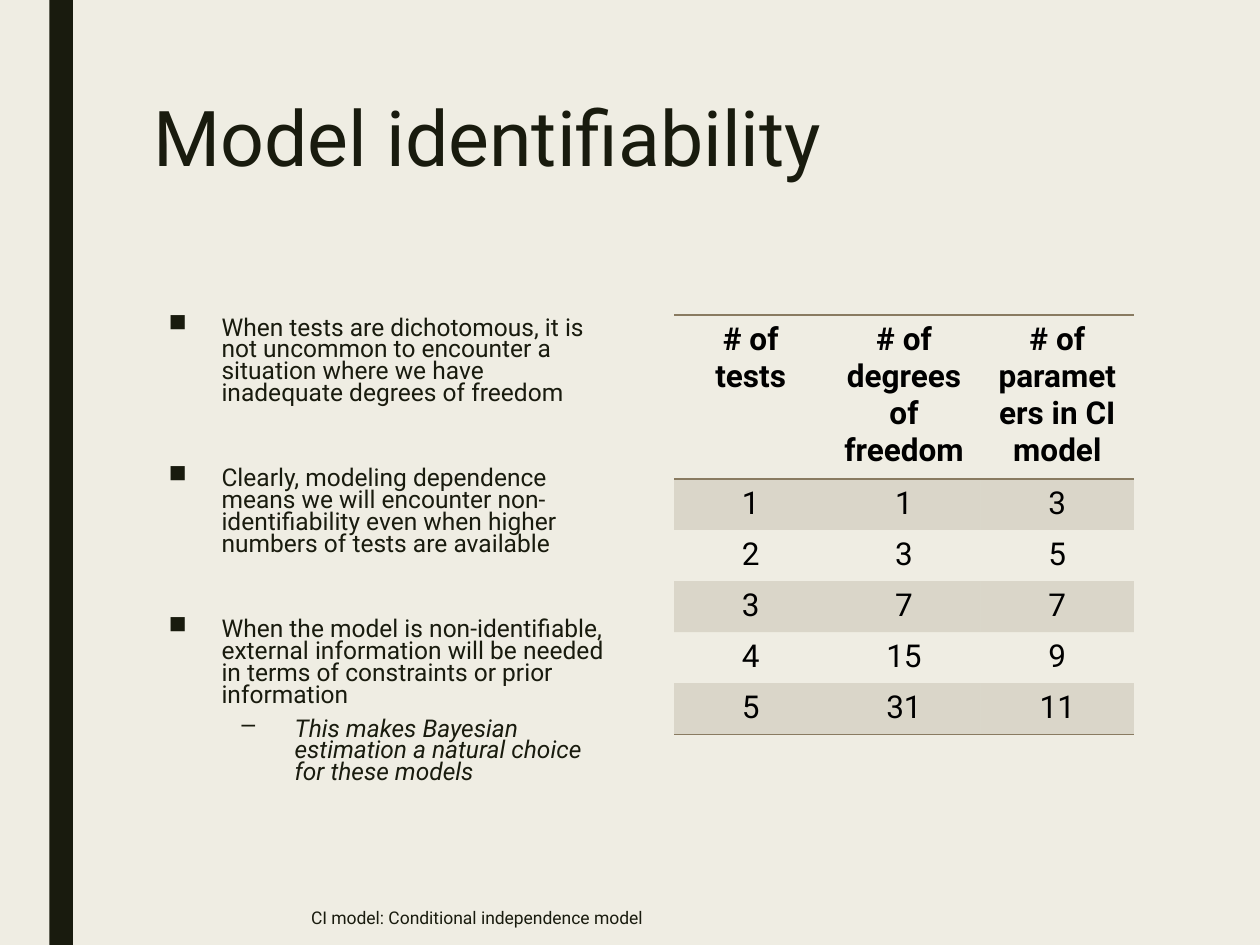
from dataclasses import dataclass

from lxml import etree
from pptx import Presentation
from pptx.dml.color import RGBColor
from pptx.enum.shapes import MSO_SHAPE
from pptx.enum.text import MSO_ANCHOR, PP_ALIGN
from pptx.oxml.ns import qn
from pptx.util import Pt

RECTANGLE = MSO_SHAPE.RECTANGLE
TOP, MIDDLE = MSO_ANCHOR.TOP, MSO_ANCHOR.MIDDLE
LEFT, CENTER = PP_ALIGN.LEFT, PP_ALIGN.CENTER
NO_GRID_STYLE = "{2D5ABB26-0587-4C30-8999-92F81FD0307C}"


@dataclass(frozen=True)
class Theme:
    font: str = "Roboto"
    paper: str = "EFEDE3"
    ink: str = "191B0E"
    table_ink: str = "000000"
    accent: str = "897B61"
    band_opacity: int = 20
    title_size: float = 44
    table_size: float = 18
    body_size: float = 14
    footnote_size: float = 10


@dataclass(frozen=True)
class Box:
    left: float
    top: float
    width: float
    height: float

    def lengths(self) -> tuple:
        return Pt(self.left), Pt(self.top), Pt(self.width), Pt(self.height)


@dataclass(frozen=True)
class Point:
    text: str
    before: float
    marker: str = "■"
    level: int = 0
    indent: float = 30.24
    italic: bool = False


THEME = Theme()
HANGING = 30.24
POINT_GAP = 34.4

POINTS = [
    Point("When tests are dichotomous, it is not uncommon to encounter a situation "
          "where we have inadequate degrees of freedom", 10),
    Point("Clearly, modeling dependence means we will encounter non-identifiability "
          "even when higher numbers of tests are available", POINT_GAP),
    Point("When the model is non-identifiable, external information will be needed "
          "in terms of constraints or prior information", POINT_GAP),
    Point("This makes Bayesian estimation a natural choice for these models",
          5, marker="–", level=1, indent=72, italic=True),
]

HEADINGS = ("# of tests", "# of degrees of freedom", "# of parameters in CI model")
COUNTS = [(1, 1, 3), (2, 3, 5), (3, 7, 7), (4, 15, 9), (5, 31, 11)]


def write(paragraph, text: str, *, size: float, color: str = THEME.ink,
          bold: bool = False, italic: bool = False, align=LEFT,
          spacing: float = 1.0, before: float = 0, after: float = 0) -> None:
    paragraph.alignment = align
    paragraph.line_spacing = spacing
    paragraph.space_before = Pt(before)
    paragraph.space_after = Pt(after)
    run = paragraph.add_run()
    run.text = text
    run.font.name = THEME.font
    run.font.size = Pt(size)
    run.font.bold = bold
    run.font.italic = italic
    run.font.color.rgb = RGBColor.from_string(color)


def add_text_frame(slide, box: Box, anchor=TOP):
    frame = slide.shapes.add_textbox(*box.lengths()).text_frame
    frame.word_wrap = True
    frame.vertical_anchor = anchor
    return frame


def add_side_bar(slide, box: Box) -> None:
    bar = slide.shapes.add_shape(RECTANGLE, *box.lengths())
    bar.shadow.inherit = False
    bar.fill.solid()
    bar.fill.fore_color.rgb = RGBColor.from_string(THEME.ink)
    bar.line.fill.background()


def add_points(slide, box: Box, points: list[Point]) -> None:
    frame = add_text_frame(slide, box)
    for index, point in enumerate(points):
        paragraph = frame.add_paragraph() if index else frame.paragraphs[0]
        paragraph.level = point.level
        write(paragraph, point.text, size=THEME.body_size, italic=point.italic,
              spacing=0.74, before=point.before, after=2)
        properties = paragraph._p.get_or_add_pPr()
        properties.set("marL", str(Pt(point.indent)))
        properties.set("indent", str(-Pt(HANGING)))
        etree.SubElement(properties, qn("a:buChar"), char=point.marker)


def shade(cell) -> None:
    cell.fill.solid()
    cell.fill.fore_color.rgb = RGBColor.from_string(THEME.accent)
    color = cell._tc.tcPr.find(f"{qn('a:solidFill')}/{qn('a:srgbClr')}")
    etree.SubElement(color, qn("a:alpha"), val=str(THEME.band_opacity * 1000))


def rule(cell, edges: list[str]) -> None:
    properties = cell._tc.get_or_add_tcPr()
    for position, edge in enumerate(edges):
        line = etree.Element(qn(edge), w=str(Pt(1)))
        fill = etree.SubElement(line, qn("a:solidFill"))
        etree.SubElement(fill, qn("a:srgbClr"), val=THEME.accent)
        properties.insert(position, line)


def add_count_table(slide, box: Box, headings: tuple, counts: list[tuple]) -> None:
    rows = [headings, *counts]
    table = slide.shapes.add_table(len(rows), len(headings), *box.lengths()).table
    table.first_row = True
    table.horz_banding = True
    table._tbl.tblPr.find(qn("a:tableStyleId")).text = NO_GRID_STYLE
    for row_index, values in enumerate(rows):
        is_heading = row_index == 0
        edges = ["a:lnT", "a:lnB"] if is_heading else []
        if row_index == len(rows) - 1:
            edges = ["a:lnB"]
        for column, value in enumerate(values):
            cell = table.cell(row_index, column)
            write(cell.text_frame.paragraphs[0], str(value), size=THEME.table_size,
                  color=THEME.table_ink, bold=is_heading, align=CENTER)
            if row_index % 2:
                shade(cell)
            else:
                cell.fill.background()
            rule(cell, edges)


def main() -> None:
    deck = Presentation()
    deck.slide_width, deck.slide_height = Pt(720), Pt(540)
    slide = deck.slides.add_slide(deck.slide_layouts[6])
    slide.background.fill.solid()
    slide.background.fill.fore_color.rgb = RGBColor.from_string(THEME.paper)

    add_side_bar(slide, Box(28.2, 0, 13.5, 540))
    title = add_text_frame(slide, Box(80.64, 54, 567.36, 116.64))
    write(title.paragraphs[0], "Model identifiability",
          size=THEME.title_size, spacing=0.89)
    add_points(slide, Box(89.28, 178.56, 266.4, 289.44), POINTS)
    add_count_table(slide, Box(385.2, 180, 262.8, 175.2), HEADINGS, COUNTS)
    footnote = add_text_frame(slide, Box(170.64, 508.32, 370.8, 31.68), MIDDLE)
    write(footnote.paragraphs[0], "CI model: Conditional independence model",
          size=THEME.footnote_size)
    deck.save("out.pptx")


if __name__ == "__main__":
    main()
